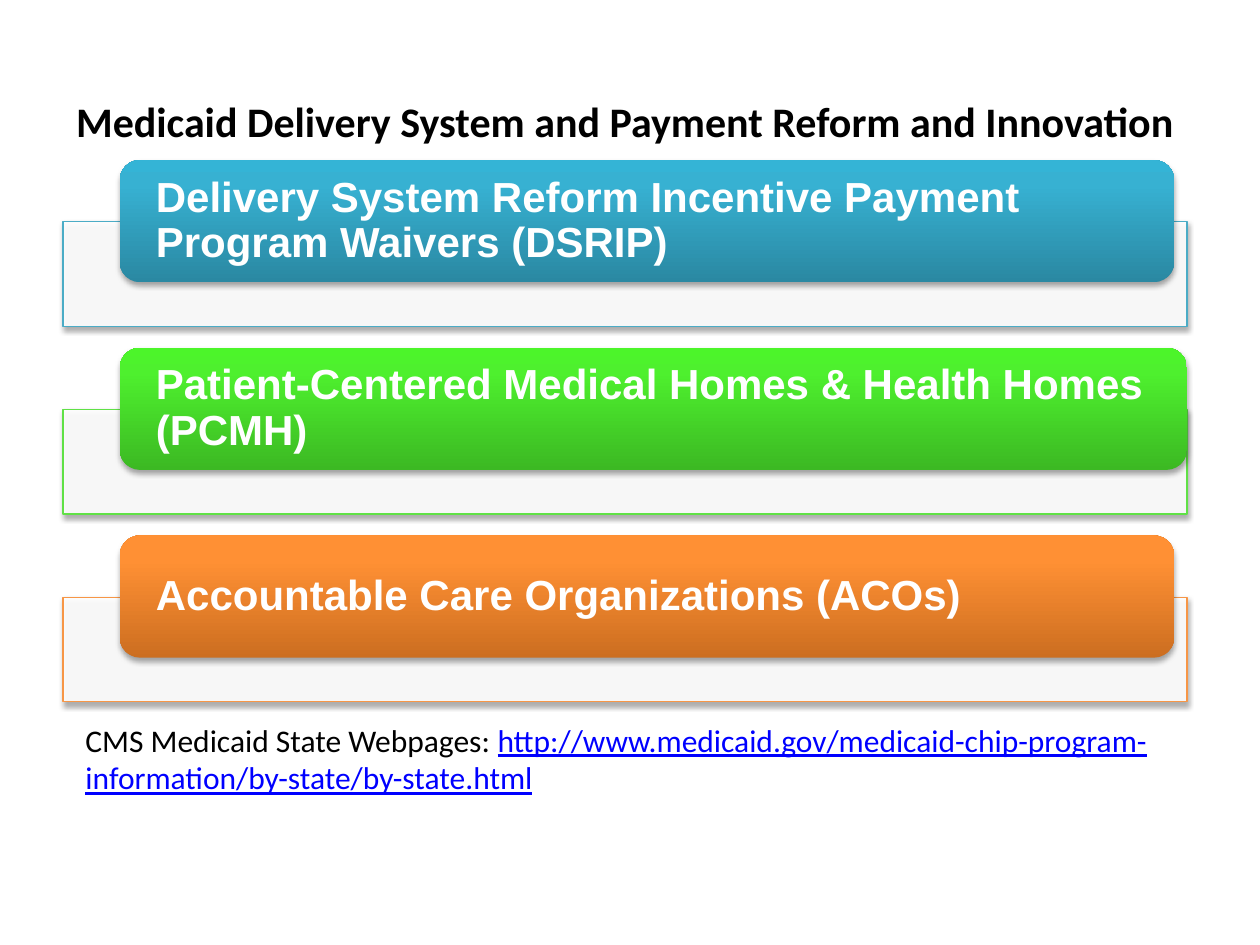
from lxml import etree
from pptx import Presentation
from pptx.dml.color import RGBColor
from pptx.enum.shapes import MSO_SHAPE
from pptx.enum.text import MSO_ANCHOR, PP_ALIGN
from pptx.oxml import parse_xml
from pptx.oxml.ns import nsdecls, qn
from pptx.util import Inches, Pt

RECTANGLE, ROUNDED = MSO_SHAPE.RECTANGLE, MSO_SHAPE.ROUNDED_RECTANGLE
MIDDLE, TOP = MSO_ANCHOR.MIDDLE, MSO_ANCHOR.TOP
LEFT, CENTER = PP_ALIGN.LEFT, PP_ALIGN.CENTER

TITLE = "Medicaid Delivery System and Payment\u00a0Reform and Innovation"
PROGRAMS = [
    {"name": "Delivery System Reform Incentive Payment Program Waivers (DSRIP)",
     "outline": "4BACC6", "gradient": ("2A88A2", "37B1D2", "34B4D6"), "width": 8.37},
    {"name": "Patient-Centered Medical Homes & Health Homes (PCMH)",
     "outline": "60E146", "gradient": ("3CB923", "4EF02E", "4CF52A"), "width": 8.47},
    {"name": "Accountable Care Organizations (ACOs)",
     "outline": "F79646", "gradient": ("CC6E20", "FF9034", "FF9136"), "width": 8.37},
]
SOURCE_LABEL = "CMS Medicaid State Webpages: "
SOURCE_ADDRESS = "http://www.medicaid.gov/medicaid-chip-program-information/by-state/by-state.html"

PANEL_LEFT, PANEL_WIDTH, PANEL_HEIGHT, PANEL_DROP = 0.5, 8.92, 0.83, 0.49
CARD_LEFT, CARD_TOP, CARD_HEIGHT, CARD_PITCH = 0.95, 1.27, 0.97, 1.49
STOPS = (0, 80, 100)


def color(value):
    """Turn a hex string into a colour."""
    return RGBColor.from_string(value)


def style_font(font, name, size, value, bold=False):
    """Set the face, size, colour and weight of a font."""
    font.name, font.size, font.bold = name, Pt(size), bold
    font.color.rgb = color(value)


def set_frame(frame, anchor, side, vertical):
    """Set wrapping, anchor and margins of a text frame."""
    frame.word_wrap, frame.vertical_anchor = True, anchor
    frame.margin_left = frame.margin_right = Inches(side)
    frame.margin_top = frame.margin_bottom = Inches(vertical)


def add_shadow(shape):
    """Give a shape a soft shadow that falls straight down."""
    shape.shadow.inherit = False
    effects = shape._element.spPr.find(qn("a:effectLst"))
    effects.append(parse_xml(
        f'<a:outerShdw {nsdecls("a")} blurRad="40000" dist="23000" dir="5400000" '
        'rotWithShape="0"><a:srgbClr val="000000"><a:alpha val="35000"/>'
        '</a:srgbClr></a:outerShdw>'))


def add_panel(slide, top, outline):
    """Add the pale outlined panel behind a card."""
    panel = slide.shapes.add_shape(RECTANGLE, Inches(PANEL_LEFT), Inches(top),
                                   Inches(PANEL_WIDTH), Inches(PANEL_HEIGHT))
    panel.fill.solid()
    panel.fill.fore_color.rgb = color("FFFFFF")
    fill_color = panel._element.spPr.find(qn("a:solidFill")).find(qn("a:srgbClr"))
    etree.SubElement(fill_color, qn("a:alpha"), val="90000")
    panel.line.color.rgb = color(outline)
    panel.line.width = Pt(0.75)
    add_shadow(panel)


def add_card(slide, top, program):
    """Add a rounded gradient card that carries the program name."""
    card = slide.shapes.add_shape(ROUNDED, Inches(CARD_LEFT), Inches(top),
                                  Inches(program["width"]), Inches(CARD_HEIGHT))
    stops = "".join(f'<a:gs pos="{stop * 1000}"><a:srgbClr val="{value}"/></a:gs>'
                    for stop, value in zip(STOPS, program["gradient"]))
    card._element.spPr.find(qn("a:prstGeom")).addnext(parse_xml(
        f'<a:gradFill {nsdecls("a")} rotWithShape="1"><a:gsLst>{stops}</a:gsLst>'
        '<a:lin ang="16200000" scaled="0"/></a:gradFill>'))
    card.line.fill.background()
    add_shadow(card)
    frame = card.text_frame
    set_frame(frame, MIDDLE, 0.24, 0)
    frame.text = program["name"]
    paragraph = frame.paragraphs[0]
    paragraph.alignment, paragraph.line_spacing = LEFT, 0.9
    style_font(paragraph.runs[0].font, "Arial", 24, "FFFFFF", True)


def add_title(slide):
    """Place and format the slide title."""
    title = slide.shapes.title
    title.left, title.top = Inches(0.5), Inches(0.67)
    title.width, title.height = Inches(PANEL_WIDTH), Inches(0.58)
    title.text_frame.text = TITLE
    set_frame(title.text_frame, MIDDLE, 0.05, 0.05)
    paragraph = title.text_frame.paragraphs[0]
    paragraph.alignment = CENTER
    style_font(paragraph.runs[0].font, "Calibri", 24, "000000", True)


def add_source(slide):
    """Add the source line with its underlined address."""
    box = slide.shapes.add_textbox(Inches(0.58), Inches(5.67), Inches(8.75), Inches(0.71))
    set_frame(box.text_frame, TOP, 0.1, 0.05)
    paragraph = box.text_frame.paragraphs[0]
    for text, value in ((SOURCE_LABEL, "000000"), (SOURCE_ADDRESS, "0000FF")):
        run = paragraph.add_run()
        run.text = text
        style_font(run.font, "Calibri", 18, value)
    run.font.underline = True


def main():
    """Build the slide and save it."""
    presentation = Presentation()
    presentation.slide_width, presentation.slide_height = Inches(10), Inches(7.5)
    slide = presentation.slides.add_slide(presentation.slide_layouts[5])
    add_title(slide)
    for index, program in enumerate(PROGRAMS):
        top = CARD_TOP + index * CARD_PITCH
        add_panel(slide, top + PANEL_DROP, program["outline"])
        add_card(slide, top, program)
    add_source(slide)
    presentation.save("out.pptx")


if __name__ == "__main__":
    main()
